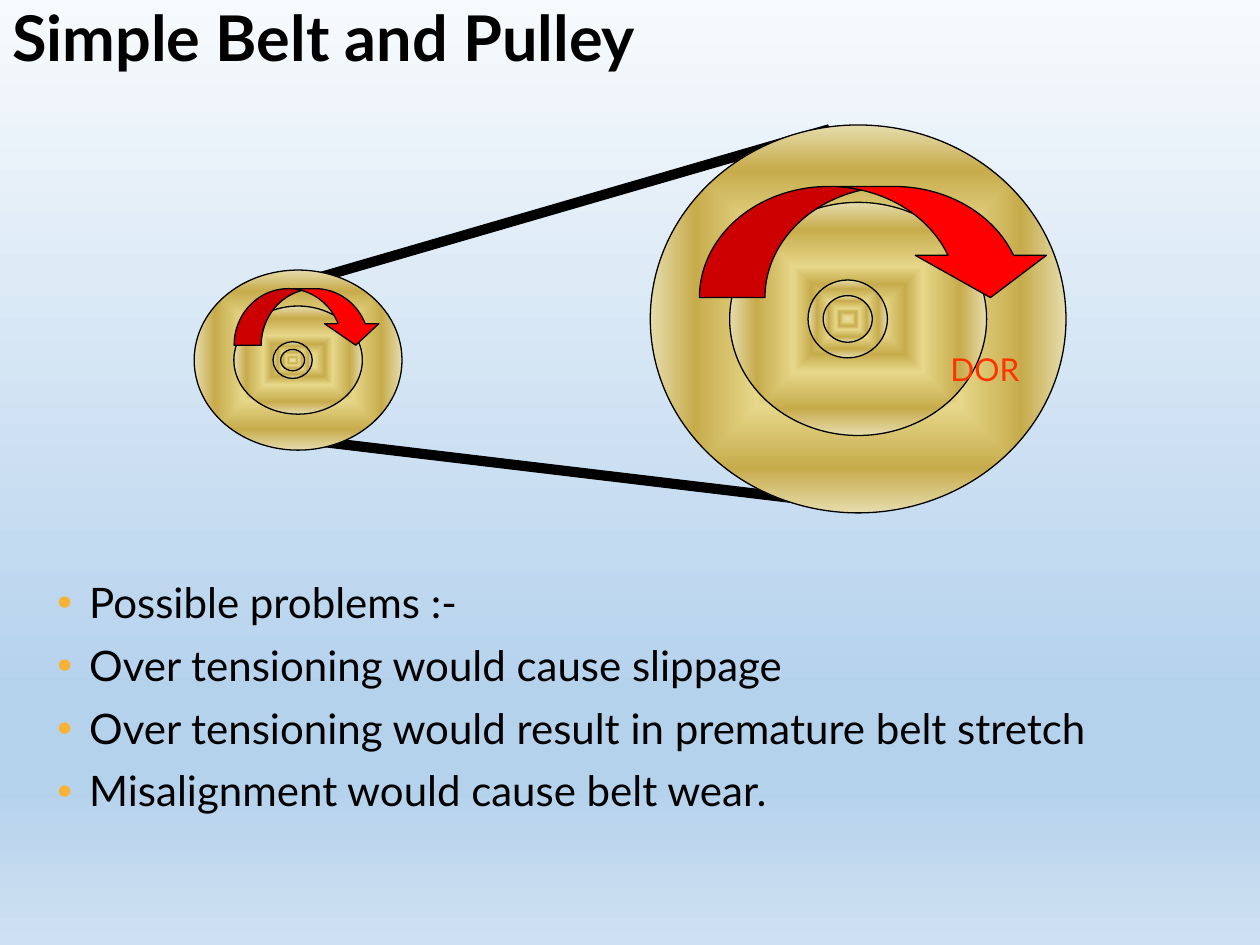
"""Build the belt and pulley slide."""
from dataclasses import dataclass

from lxml import etree
from pptx import Presentation
from pptx import util as u
from pptx.dml.color import RGBColor
from pptx.enum import shapes, text
from pptx.oxml import ns


@dataclass(frozen=True)
class Theme:
    """Colours, gradients and type sizes."""
    font: str = "Lato"
    ink: str = "000000"
    red: str = "FF0000"
    label: str = "FF3300"
    dot: str = "F9B233"
    sky: tuple = ((0, "F7FAFD"), (74, "B5D2EC"), (83, "B5D2EC"), (100, "CEE1F2"))
    brass: tuple = ((0, "E6DCAC"), (12, "E6D78A"), (30, "C7AC4C"),
                    (45, "E6D78A"), (77, "C7AC4C"), (100, "E6DCAC"))
    head: int = 36
    body: int = 24
    note: int = 18


def add(root, tag, **attrs):
    """Append a drawing element and return it."""
    return etree.SubElement(root, ns.qn("a:" + tag), attrs)


def grade(root, stops):
    """Refill the gradient under root and return it."""
    grad = root.find(".//" + ns.qn("a:gradFill"))
    grad.clear()
    grad.set("rotWithShape", "1")
    chain = add(grad, "gsLst")
    for pos, hue in stops:
        add(add(chain, "gs", pos=str(pos * 1000)), "srgbClr", val=hue)
    return grad


class Deck:
    """Hold the style and the current slide."""

    def __init__(self, theme):
        self.theme = theme
        self.show = Presentation()
        self.show.slide_width, self.show.slide_height = u.Cm(25.4), u.Cm(19.05)
        self.page = self.show.slides.add_slide(self.show.slide_layouts[6])
        self.page.background.fill.gradient()
        grad = grade(self.page.background._cSld, theme.sky)
        add(grad, "lin", ang="5400000", scaled="0")

    def shape(self, kind, box, fill=None):
        """Add an outlined shape, brass unless a fill is given."""
        item = self.page.shapes.add_shape(kind, *map(u.Cm, box))
        item.shadow.inherit = False
        if fill:
            item.fill.solid()
            item.fill.fore_color.rgb = RGBColor.from_string(fill)
        else:
            item.fill.gradient()
            way = add(grade(item._element.spPr, self.theme.brass), "path", path="shape")
            add(way, "fillToRect", l="50000", t="50000", r="50000", b="50000")
        item.line.color.rgb = RGBColor.from_string(self.theme.ink)
        item.line.width = u.Pt(0.75)
        return item

    def belt(self, left, top, turn):
        """Add one straight run of the belt."""
        run = self.shape(shapes.MSO_SHAPE.RECTANGLE, (left, top, 11.84, 0.18), self.theme.ink)
        run.rotation = turn

    def pulley(self, x, y, shift, sizes):
        """Add rim and hub round a centre, then the bore rings shifted left."""
        for i, (wide, high) in enumerate(sizes):
            mid = x - shift * (i > 1)
            self.shape(shapes.MSO_SHAPE.OVAL, (mid - wide / 2, y - high / 2, wide, high))

    def arrow(self, box, thick):
        """Add a curved arrow for the direction of rotation."""
        item = self.shape(shapes.MSO_SHAPE.CURVED_DOWN_ARROW, box, self.theme.red)
        for i, val in enumerate((thick, 2 * thick, 0.38)):
            item.adjustments[i] = val

    def words(self, box, lines, size, hue, bold=False, wrap=True, dots=False,
              align=text.PP_ALIGN.LEFT, anchor=text.MSO_ANCHOR.TOP, lead=0.9):
        """Add a text box, with bullets if asked."""
        frame = self.page.shapes.add_textbox(*map(u.Cm, box)).text_frame
        frame.word_wrap = wrap
        frame.vertical_anchor = anchor
        frame.text = "\n".join(lines)
        for i, para in enumerate(frame.paragraphs):
            para.alignment = align
            para.line_spacing = lead
            if i:
                para.space_before = u.Pt(10)
            if dots:
                self.bullet(para)
            for run in para.runs:
                font = run.font
                font.name, font.size, font.bold = self.theme.font, u.Pt(size), bold
                font.color.rgb = RGBColor.from_string(hue)

    def bullet(self, para):
        """Give a paragraph a hanging coloured bullet."""
        prop = para._p.get_or_add_pPr()
        gap = u.Cm(0.64)
        prop.set("marL", str(gap))
        prop.set("indent", str(-gap))
        add(add(prop, "buClr"), "srgbClr", val=self.theme.dot)
        add(prop, "buFont", typeface="Arial")
        add(prop, "buChar", char="•")


def main():
    """Draw the slide and save it."""
    theme = Theme()
    deck = Deck(theme)
    deck.words((0, -0.03, 25.4, 1.7), ["Simple Belt and Pulley"], theme.head, theme.ink,
               bold=True, anchor=text.MSO_ANCHOR.MIDDLE)
    deck.words((0.91, 11.61, 23.55, 6.83), [
        "Possible problems :-",
        "Over tensioning would cause slippage",
        "Over tensioning would result in premature belt stretch",
        "Misalignment would cause belt wear.",
    ], theme.body, theme.ink, dots=True)
    deck.belt(5.11, 4.17, -16.2)
    deck.belt(5.87, 9.45, 6.8)
    deck.pulley(6.01, 7.26, 0.11, ((4.19, 3.63), (2.59, 2.18), (0.79, 0.74), (0.48, 0.43)))
    deck.pulley(17.3, 6.43, 0.21, ((8.38, 7.82), (5.18, 4.7), (1.6, 1.57), (0.99, 0.94)))
    deck.arrow((14.1, 3.76, 7.19, 2.24), 0.59)
    deck.arrow((4.72, 5.82, 3, 1.14), 0.48)
    deck.words((18.75, 6.93, 2.21, 1.27), ["DOR"], theme.note, theme.label,
               wrap=False, align=text.PP_ALIGN.CENTER, lead=1.0)
    deck.show.save("out.pptx")


if __name__ == "__main__":
    main()
